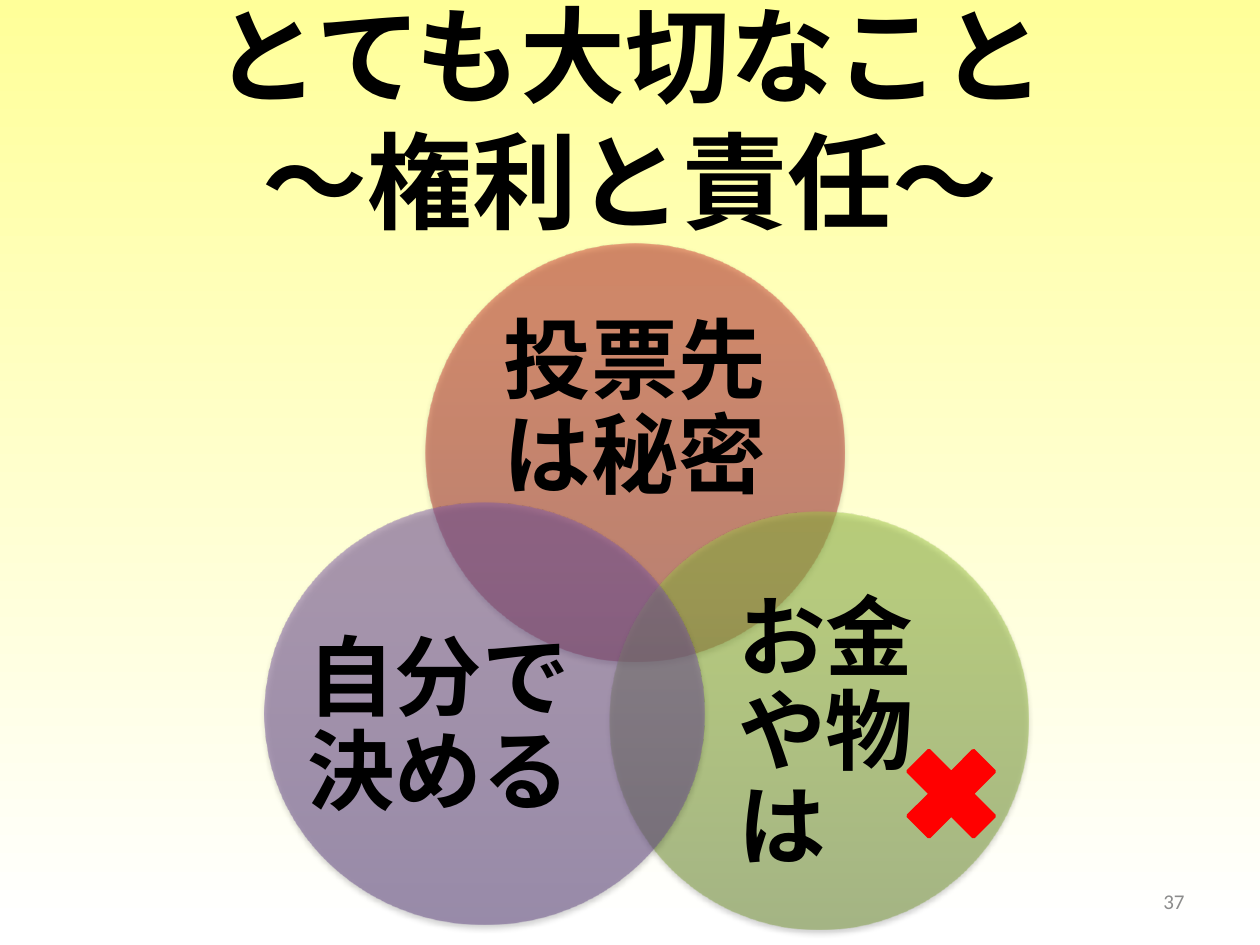
from lxml import etree
from pptx import Presentation
from pptx.dml.color import RGBColor
from pptx.enum.shapes import MSO_SHAPE
from pptx.enum.text import MSO_ANCHOR, PP_ALIGN
from pptx.oxml.ns import qn
from pptx.util import Inches, Pt

OVAL = MSO_SHAPE.OVAL
CROSS = MSO_SHAPE.MATH_MULTIPLY
MIDDLE = MSO_ANCHOR.MIDDLE
LEFT, CENTER, RIGHT = PP_ALIGN.LEFT, PP_ALIGN.CENTER, PP_ALIGN.RIGHT
JAPANESE, LATIN = "Noto Sans CJK JP", "Calibri"
COLORS = {
    "text": "000000",
    "number": "8C8C8C",
    "cross": "FF0000",
    "shadow": "000000",
    "background": [(0, "FFFF99"), (98, "FFFFFF")],
    "red": [(0, "9C2F2D"), (80, "CB3E3A"), (100, "CE3B37")],
    "green": [(0, "779737"), (80, "9BC348"), (100, "9DC746")],
    "purple": [(0, "5F4480"), (80, "7B58A6"), (100, "7C57A8")],
}
CIRCLES = [
    ("red", (3.38, 1.93, 3.32, 3.32), "投票先は秘密", (3.82, 2.52, 2.44, 1.49), CENTER),
    ("green", (4.84, 4.06, 3.32, 3.32), "お金や物は", (5.86, 4.92, 1.99, 1.83), LEFT),
    ("purple", (2.1, 3.99, 3.49, 3.35), "自分で決める", (2.43, 4.86, 2.1, 1.84), CENTER),
]


def add_color(parent, color, opacity):
    element = etree.SubElement(parent, qn("a:srgbClr"), val=color)
    if opacity < 100:
        etree.SubElement(element, qn("a:alpha"), val=str(opacity * 1000))


def set_gradient(fill, owner, stops, angle, opacity=100):
    fill.solid()
    solid = owner.find(".//" + qn("a:solidFill"))
    gradient = etree.Element(qn("a:gradFill"), rotWithShape="1")
    stop_list = etree.SubElement(gradient, qn("a:gsLst"))
    for position, color in stops:
        stop = etree.SubElement(stop_list, qn("a:gs"), pos=str(position * 1000))
        add_color(stop, color, opacity)
    etree.SubElement(gradient, qn("a:lin"), ang=str(angle * 60000), scaled="0")
    solid.getparent().replace(solid, gradient)


def set_shadow(shape):
    shape.shadow.inherit = False
    effects = shape.element.spPr.find(qn("a:effectLst"))
    shadow = etree.SubElement(
        effects, qn("a:outerShdw"), blurRad=str(Pt(3.1)), dist=str(Pt(1.8)),
        dir=str(90 * 60000), rotWithShape="0")
    add_color(shadow, COLORS["shadow"], 35)


def add_text(page, box, lines, size, align, font=JAPANESE, color="text",
             bold=True, spacing=1.0, inset=0):
    frame = page.shapes.add_textbox(*map(Inches, box)).text_frame
    frame.word_wrap = True
    frame.vertical_anchor = MIDDLE
    frame.margin_left = frame.margin_right = Inches(inset)
    frame.margin_top = frame.margin_bottom = Inches(inset / 2)
    for index, line in enumerate(lines):
        para = frame.add_paragraph() if index else frame.paragraphs[0]
        para.text = line
        para.alignment = align
        para.line_spacing = spacing
        span = para.runs[0]
        span.font.name = font
        span.font.size = Pt(size)
        span.font.bold = bold
        span.font.color.rgb = RGBColor.from_string(COLORS[color])
        etree.SubElement(span.font._element, qn("a:ea"), typeface=font)


def add_circle(page, box, color):
    circle = page.shapes.add_shape(OVAL, *map(Inches, box))
    set_gradient(circle.fill, circle.element.spPr, COLORS[color], 270, 50)
    circle.line.fill.background()
    set_shadow(circle)


def add_venn(page):
    for color, circle_box, label, label_box, align in CIRCLES:
        add_circle(page, circle_box, color)
        add_text(page, label_box, [label], 50, align, spacing=0.9)


def add_cross(page, box):
    cross = page.shapes.add_shape(CROSS, *map(Inches, box))
    red = RGBColor.from_string(COLORS["cross"])
    cross.shadow.inherit = False
    cross.fill.solid()
    cross.fill.fore_color.rgb = red
    cross.line.color.rgb = red
    cross.line.width = Pt(2)


def main():
    deck = Presentation()
    deck.slide_width, deck.slide_height = Inches(10), Inches(7.5)
    page = deck.slides.add_slide(deck.slide_layouts[6])
    set_gradient(page.background.fill, page.element, COLORS["background"], 90)
    add_text(page, (7.17, 6.95, 2.33, 0.4), ["37"], 12, RIGHT, font=LATIN,
             color="number", bold=False, inset=0.1)
    add_text(page, (0.5, 0.3, 9, 1.25), ["とても大切なこと", "～権利と責任～"],
             60, CENTER, inset=0.1)
    add_venn(page)
    add_cross(page, (7.05, 5.8, 1, 1))
    deck.save("out.pptx")


if __name__ == "__main__":
    main()
